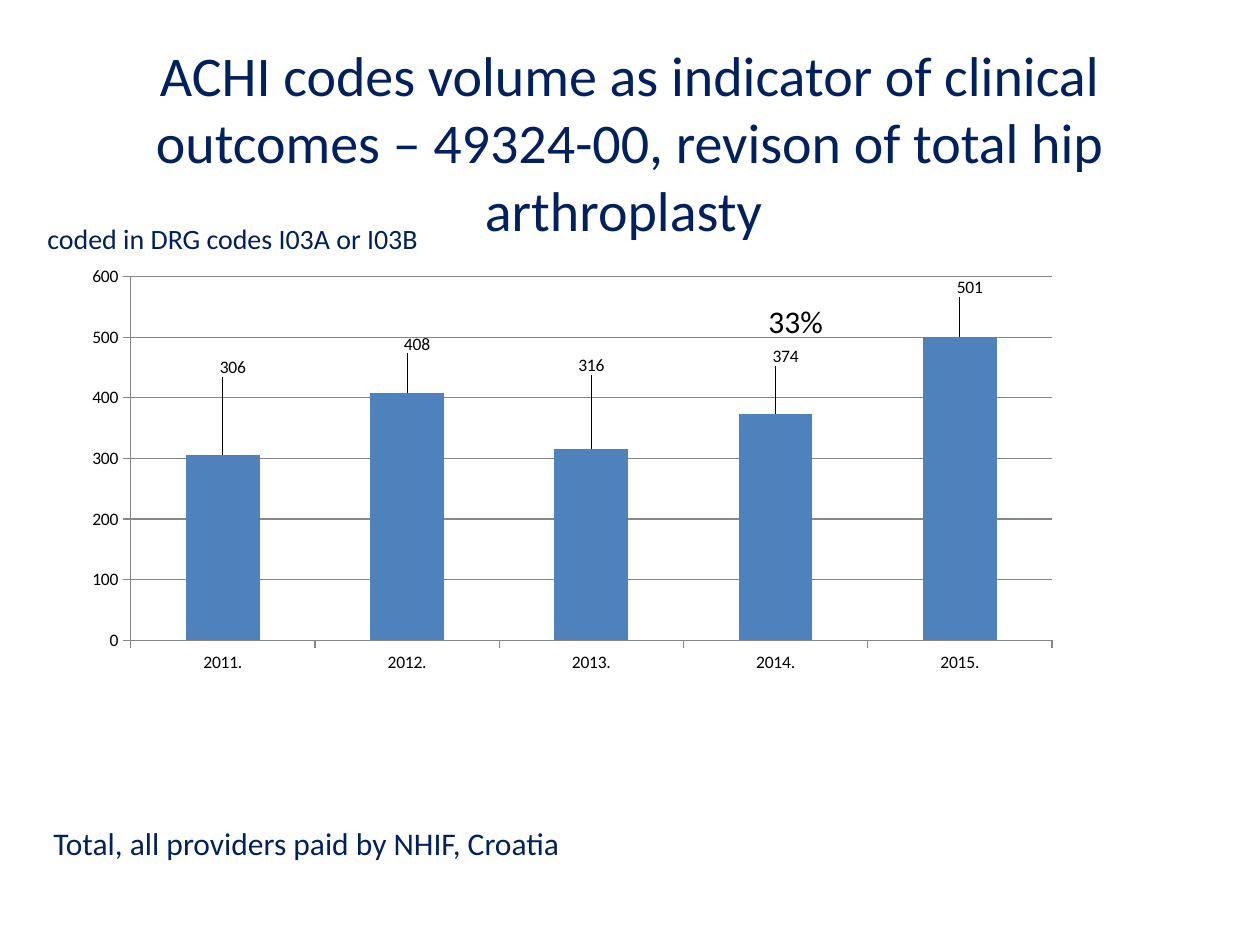
from lxml.etree import SubElement
from pptx import Presentation
from pptx.chart.data import CategoryChartData
from pptx.dml.color import RGBColor
from pptx.enum.chart import XL_CHART_TYPE, XL_LABEL_POSITION, XL_TICK_MARK
from pptx.enum.text import MSO_ANCHOR, MSO_AUTO_SIZE, PP_ALIGN
from pptx.oxml.ns import qn
from pptx.util import Emu, Pt

COLORS = {"navy": "002060", "black": "000000", "bar": "4F81BD", "axis": "878787"}
FONT = "Calibri"
YEARS = ["2011.", "2012.", "2013.", "2014.", "2015."]
VOLUMES = [306, 408, 316, 374, 501]
LABEL_SHIFTS = [(0.01, -0.17), (0.01, -0.08), (0, -0.16), (0.01, -0.1), (0.01, -0.08)]


def px(n):
    return Emu(round(n * 914400 / 126))


def rgb(name):
    return RGBColor.from_string(COLORS[name])


def set_font(font, size, color):
    font.name = FONT
    font.size = Pt(size)
    font.color.rgb = rgb(color)


def add_title(s, text, x, y, w, h):
    sp = s.shapes.title
    sp.left, sp.top, sp.width, sp.height = map(px, (x, y, w, h))
    tf = sp.text_frame
    tf.word_wrap = True
    tf.auto_size = MSO_AUTO_SIZE.NONE
    tf.vertical_anchor = MSO_ANCHOR.MIDDLE
    p = tf.paragraphs[0]
    p.text = text
    p.alignment = PP_ALIGN.CENTER
    set_font(p.font, 32, "navy")


def add_text(s, text, x, y, w, h, size, color="navy"):
    tf = s.shapes.add_textbox(*map(px, (x, y, w, h))).text_frame
    tf.word_wrap = True
    tf.auto_size = MSO_AUTO_SIZE.SHAPE_TO_FIT_TEXT
    p = tf.paragraphs[0]
    p.text = text
    set_font(p.font, size, color)


def add_layout(parent, **values):
    layout = parent.find(qn("c:layout"))
    if layout is None:
        layout = SubElement(parent, qn("c:layout"))
        parent.insert(1 if parent.tag == qn("c:dLbl") else 0, layout)
    manual = SubElement(layout, qn("c:manualLayout"))
    for tag, value in values.items():
        SubElement(manual, qn(f"c:{tag}")).set("val", str(value))


def style_axis(axis):
    axis.major_tick_mark = XL_TICK_MARK.OUTSIDE
    axis.minor_tick_mark = XL_TICK_MARK.NONE
    axis.format.line.color.rgb = rgb("axis")


def add_volume_chart(s, x, y, w, h):
    data = CategoryChartData()
    data.categories = YEARS
    data.add_series("Series 1", VOLUMES)
    chart = s.shapes.add_chart(
        XL_CHART_TYPE.COLUMN_CLUSTERED, *map(px, (x, y, w, h)), data
    ).chart
    chart.has_legend = False
    chart.has_title = False
    set_font(chart.font, 10, "black")
    style_axis(chart.category_axis)
    axis = chart.value_axis
    style_axis(axis)
    axis.minimum_scale, axis.maximum_scale, axis.major_unit = 0, 600, 100
    axis.has_major_gridlines = True
    axis.major_gridlines.format.line.color.rgb = rgb("axis")

    plot = chart.plots[0]
    plot.gap_width = 150
    plot.vary_by_categories = False
    series = plot.series[0]
    series.format.fill.solid()
    series.format.fill.fore_color.rgb = rgb("bar")
    series.data_labels.show_value = True
    for i, (dx, dy) in enumerate(LABEL_SHIFTS):
        series.points[i].data_label.position = XL_LABEL_POSITION.OUTSIDE_END
        label = series.data_labels._element.findall(qn("c:dLbl"))[i]
        add_layout(label, x=dx, y=dy)

    area = chart._chartSpace.find(".//" + qn("c:plotArea"))
    add_layout(area, layoutTarget="inner", xMode="edge", yMode="edge",
               x=0.058, y=0.025, w=0.926, h=0.852)


def main():
    prs = Presentation()
    prs.slide_width, prs.slide_height = px(1260), px(945)
    s = prs.slides.add_slide(prs.slide_layouts[5])
    add_title(s, "ACHI codes volume as indicator of clinical outcomes – 49324-00, "
                 "revison of total hip arthroplasty ", 87, 50, 1086, 183)
    add_volume_chart(s, 73, 266, 995, 427)
    add_text(s, "33%", 756, 296, 108, 50, 18, "black")
    add_text(s, "coded in DRG codes I03A or I03B", 35, 215, 447, 47, 16)
    add_text(s, "Total, all providers paid by NHIF, Croatia", 41, 818, 631, 50, 18)
    prs.save("out.pptx")


if __name__ == "__main__":
    main()
